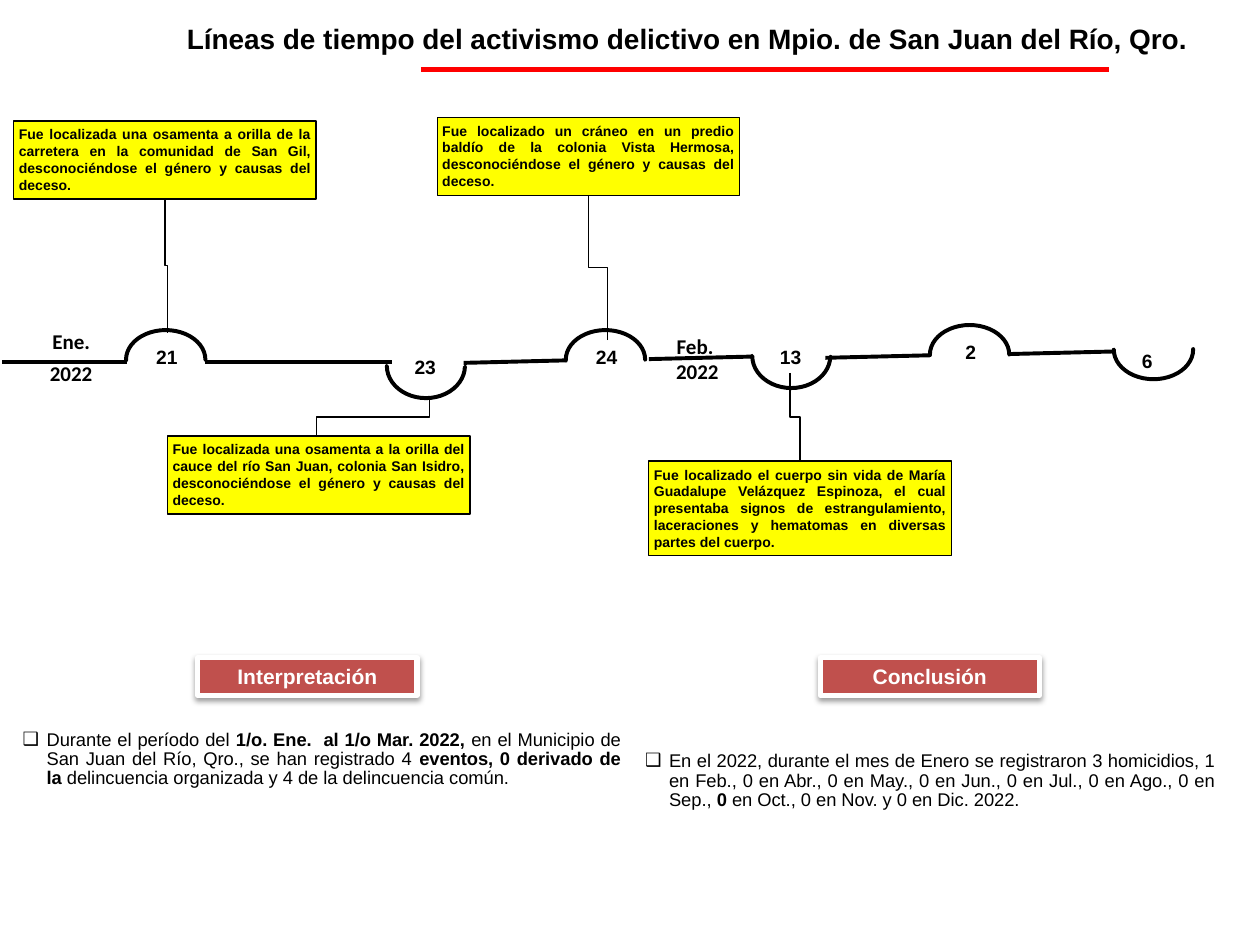
from lxml.etree import SubElement
from pptx import Presentation
from pptx.dml.color import RGBColor
from pptx.enum.shapes import MSO_CONNECTOR, MSO_SHAPE
from pptx.enum.text import MSO_ANCHOR, MSO_AUTO_SIZE, PP_ALIGN
from pptx.oxml import parse_xml
from pptx.oxml.ns import nsdecls, qn
from pptx.util import Inches, Pt

BLACK = RGBColor(0, 0, 0)
WHITE = RGBColor(255, 255, 255)
RED = RGBColor(255, 0, 0)
BRICK = RGBColor(0xC0, 0x50, 0x4D)
YELLOW = RGBColor(255, 255, 0)

TITLE = "Líneas de tiempo del activismo delictivo en Mpio. de San Juan del Río, Qro."
# Arc ends as preset adjustments: start angle, end angle, thickness
FULL_ARC = (108, 0.541, 0)
WIDE_ARC = (108, 215.278, 0.001)
# day, label box, arc box, arc opens downwards, arc ends
EVENTS = [
    ("21", (0.92, 2.7, 0.81, 0.26), (1, 2.62, 0.63, 0.47), True, FULL_ARC),
    ("23", (3.02, 2.78, 0.71, 0.26), (3.07, 2.65, 0.62, 0.51), False, WIDE_ARC),
    ("24", (4.41, 2.7, 0.81, 0.26), (4.49, 2.62, 0.63, 0.47), True, FULL_ARC),
    ("13", (5.92, 2.7, 0.71, 0.26), (5.97, 2.57, 0.62, 0.51), False, WIDE_ARC),
    ("2", (7.3, 2.66, 0.81, 0.26), (7.38, 2.58, 0.63, 0.47), True, FULL_ARC),
    ("6", (8.7, 2.73, 0.81, 0.26), (8.84, 2.54, 0.63, 0.47), False, FULL_ARC),
]
TIMELINE = [
    (0.02, 2.87, 1.01, 2.87), (1.63, 2.87, 3.11, 2.87), (3.68, 2.88, 4.5, 2.86),
    (5.15, 2.85, 5.97, 2.83), (6.55, 2.84, 7.38, 2.82), (8.01, 2.81, 8.83, 2.79),
]
MONTHS = [
    (["Ene."], (0.05, 2.56, 1.03, 0.3)),
    (["2022"], (0.05, 2.81, 1.03, 0.3)),
    (["Feb. ", "2022"], (5.02, 2.6, 1.03, 0.5)),
]
# note text, box, leader line
NOTES = [
    ("Fue localizada una osamenta a la orilla del cauce del río San Juan, colonia San "
     "Isidro, desconociéndose el género y causas del deceso.",
     (1.33, 3.46, 2.4, 0.62), (3.41, 3.15, 2.51, 3.47)),
    ("Fue localizada una osamenta a orilla de la carretera en la comunidad de San Gil, "
     "desconociéndose el género y causas del deceso.",
     (0.11, 0.96, 2.4, 0.62), (1.33, 2.64, 1.31, 1.57)),
    ("Fue localizado un cráneo en un predio baldío de la colonia Vista Hermosa, "
     "desconociéndose el género y causas del deceso.",
     (3.47, 0.93, 2.4, 0.62), (4.82, 2.7, 4.67, 1.55)),
    ("Fue localizado el cuerpo sin vida de María Guadalupe Velázquez Espinoza, el cual "
     "presentaba signos de estrangulamiento, laceraciones y hematomas en diversas "
     "partes del cuerpo.",
     (5.15, 3.66, 2.4, 0.75), (6.27, 2.96, 6.35, 3.66)),
]
# heading, heading left, body box, runs as (text, bold)
SECTIONS = [
    ("Interpretación", 1.57, (0.18, 5.8, 4.75, 0.46), [
        ("Durante el período del ", False),
        ("1/o. Ene.  al 1/o Mar. 2022,", True),
        (" en el Municipio de San Juan del Río, Qro., se han registrado 4 ", False),
        ("eventos, 0 derivado de la", True),
        (" delincuencia organizada y 4 de la delincuencia común.", False)]),
    ("Conclusión", 6.51, (5.12, 5.97, 4.53, 0.46), [
        ("En el 2022, durante el mes de Enero se registraron 3 homicidios, 1 en Feb., "
         "0 en Abr., 0 en May., 0 en Jun., 0 en Jul., 0 en Ago., 0 en Sep., ", False),
        ("0", True),
        (" en Oct., 0 en Nov. y 0 en Dic. 2022.", False)]),
]


def place(shape, box):
    shape.left, shape.top, shape.width, shape.height = map(Inches, box)


def set_frame(shape, inset=(0, 0)):
    """Prepare the text frame; inset is (horizontal, vertical) in inches."""
    frame = shape.text_frame
    frame.word_wrap = True
    frame.auto_size = MSO_AUTO_SIZE.NONE
    frame.vertical_anchor = MSO_ANCHOR.TOP
    frame.margin_left = frame.margin_right = Inches(inset[0])
    frame.margin_top = frame.margin_bottom = Inches(inset[1])
    return frame


def add_run(paragraph, text, size, color=BLACK, bold=True, font="Arial"):
    run = paragraph.add_run()
    run.text = text
    run.font.name, run.font.size, run.font.bold = font, Pt(size), bold
    run.font.color.rgb = color


def write(shape, lines, size, inset=(0.04, 0.04), align=PP_ALIGN.CENTER, **style):
    frame = set_frame(shape, inset)
    for index, line in enumerate(lines):
        paragraph = frame.add_paragraph() if index else frame.paragraphs[0]
        paragraph.alignment = align
        add_run(paragraph, line, size, **style)


def add_line(slide, ends, width, color=BLACK, kind=MSO_CONNECTOR.STRAIGHT):
    line = slide.shapes.add_connector(kind, *map(Inches, ends))
    line.line.color.rgb, line.line.width = color, Pt(width)
    SubElement(line._element.spPr, qn("a:effectLst"))
    return line


def add_leader(slide, ends):
    """Elbow that leaves and arrives vertically: a rotated horizontal elbow."""
    x1, y1, x2, y2 = ends
    across, down = x2 - x1, y2 - y1
    width, height = abs(down), abs(across)
    leader = add_line(slide, (0, 0, 1, 1), 0.75, kind=MSO_CONNECTOR.ELBOW)
    place(leader, ((x1 + x2 - width) / 2, (y1 + y2 - height) / 2, width, height))
    transform = leader._element.spPr.find(qn("a:xfrm"))
    transform.set("rot", str((90 if down > 0 else 270) * 60000))
    if across * down > 0:
        transform.set("flipV", "1")


def add_box(slide, box, fill, line_color, line_width):
    shape = slide.shapes.add_shape(MSO_SHAPE.RECTANGLE, *map(Inches, box))
    shape.shadow.inherit = False
    shape.fill.solid()
    shape.fill.fore_color.rgb = fill
    shape.line.color.rgb, shape.line.width = line_color, Pt(line_width)
    return shape


def add_event(slide, day, label_box, arc_box, opens_down, arc_ends):
    group = slide.shapes.add_group_shape()
    label = group.shapes.add_textbox(*map(Inches, label_box))
    write(label, [day], 11)
    arc = group.shapes.add_shape(MSO_SHAPE.BLOCK_ARC, *map(Inches, arc_box))
    arc.shadow.inherit = False
    arc.fill.background()
    arc.line.color.rgb, arc.line.width = BLACK, Pt(2.25)
    for index, value in enumerate(arc_ends):
        arc.adjustments[index] = value
    arc.rotation = 180 if opens_down else 0
    arc._element.spPr.find(qn("a:xfrm")).set("flipV", "1")


def add_section(slide, placeholder, heading, left, body_box, runs):
    box = add_box(slide, (left, 5.22, 1.74, 0.3), BRICK, WHITE, 3)
    box._element.spPr.find(qn("a:effectLst")).append(parse_xml(
        f'<a:outerShdw {nsdecls("a")} blurRad="40000" dist="20000" dir="5400000" '
        'rotWithShape="0"><a:srgbClr val="000000"><a:alpha val="38000"/></a:srgbClr>'
        '</a:outerShdw>'))
    write(box, [heading], 12, inset=(0.1, 0.05), color=WHITE)

    place(placeholder, body_box)
    paragraph = set_frame(placeholder).paragraphs[0]
    properties = paragraph._p.get_or_add_pPr()
    properties.set("marL", str(Inches(0.19)))
    properties.set("indent", str(-Inches(0.19)))
    SubElement(properties, qn("a:buChar")).set("char", "❑")
    paragraph.alignment = PP_ALIGN.JUSTIFY
    paragraph.line_spacing, paragraph.space_before = Pt(11), Pt(0)
    for text, bold in runs:
        add_run(paragraph, text, 10.5, bold=bold)


def main():
    presentation = Presentation()
    presentation.slide_width, presentation.slide_height = Inches(10), Inches(7.5)
    slide = presentation.slides.add_slide(presentation.slide_layouts[3])
    title, *bodies = slide.placeholders

    place(title, (1.24, 0.17, 8.43, 0.27))
    write(title, [TITLE], 16, inset=(0, 0))
    add_line(slide, (3.34, 0.55, 8.8, 0.55), 3, RED)

    for ends in TIMELINE:
        add_line(slide, ends, 2.25)
    for event in EVENTS:
        add_event(slide, *event)
    for lines, box in MONTHS:
        label = slide.shapes.add_textbox(*map(Inches, box))
        write(label, lines, 12, inset=(0.1, 0.05), font="Calibri")
    for text, box, leader in NOTES:
        add_leader(slide, leader)
        note = add_box(slide, box, YELLOW, BLACK, 0.75)
        write(note, [text], 8, align=PP_ALIGN.JUSTIFY)
    for body, section in zip(bodies, SECTIONS):
        add_section(slide, body, *section)

    presentation.save("out.pptx")


if __name__ == "__main__":
    main()
